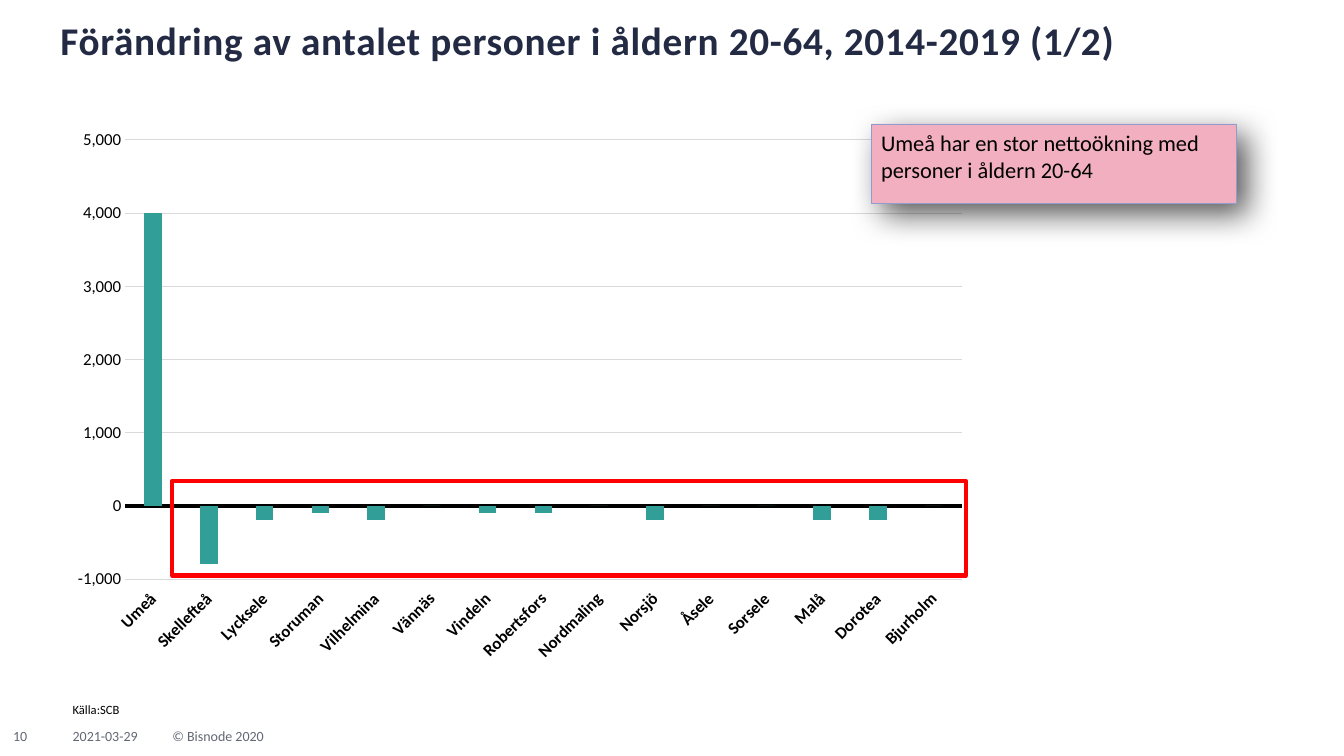
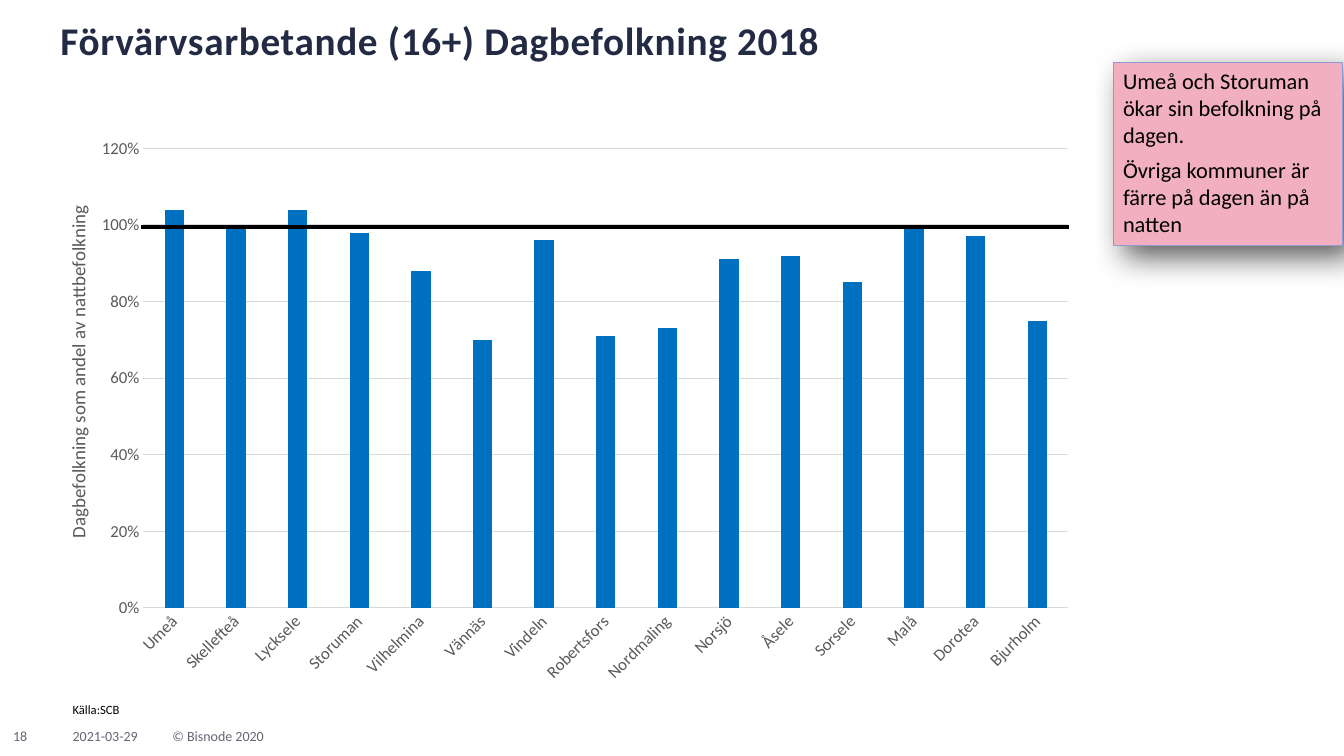
from lxml import etree
from pptx import Presentation
from pptx.chart.data import CategoryChartData
from pptx.dml.color import RGBColor
from pptx.enum.chart import XL_CHART_TYPE, XL_TICK_LABEL_POSITION, XL_TICK_MARK
from pptx.enum.shapes import MSO_CONNECTOR, MSO_SHAPE
from pptx.enum.text import MSO_ANCHOR, MSO_AUTO_SIZE, PP_ALIGN
from pptx.oxml import parse_xml
from pptx.oxml.ns import nsdecls, qn
from pptx.util import Inches, Pt

COLUMNS = XL_CHART_TYPE.COLUMN_CLUSTERED
LOW, NEXT_TO_AXIS = XL_TICK_LABEL_POSITION.LOW, XL_TICK_LABEL_POSITION.NEXT_TO_AXIS
NO_TICK = XL_TICK_MARK.NONE
STRAIGHT = MSO_CONNECTOR.STRAIGHT
RECTANGLE = MSO_SHAPE.RECTANGLE
TOP, BOTTOM = MSO_ANCHOR.TOP, MSO_ANCHOR.BOTTOM
FIT_SHAPE = MSO_AUTO_SIZE.SHAPE_TO_FIT_TEXT
LEFT = PP_ALIGN.LEFT


class Theme:
    font = "Calibri"
    navy = RGBColor.from_string("232A43")
    footer = RGBColor.from_string("626774")
    black = RGBColor.from_string("000000")
    grey = RGBColor.from_string("595959")
    grid = RGBColor.from_string("D9D9D9")
    teal = RGBColor.from_string("329E98")
    blue = RGBColor.from_string("0070C0")
    pink = RGBColor.from_string("F1AFC0")
    callout_edge = RGBColor.from_string("909BD2")
    red = RGBColor.from_string("FF0000")
    title_size = Pt(28)
    callout_size = Pt(16)
    axis_title_size = Pt(13.5)
    axis_size = Pt(12)
    footer_size = Pt(10)
    source_size = Pt(9)


def add_label(slide, box, text, size, color, anchor=BOTTOM, right_inset=0, wrap=False, spacing=None):
    label = slide.shapes.add_textbox(*[Inches(length) for length in box])
    frame = label.text_frame
    frame.margin_left = frame.margin_top = frame.margin_bottom = 0
    frame.margin_right = Inches(right_inset)
    frame.vertical_anchor = anchor
    frame.word_wrap = wrap
    frame.auto_size = FIT_SHAPE
    frame.text = text
    paragraph = frame.paragraphs[0]
    paragraph.line_spacing = spacing
    font = paragraph.runs[0].font
    font.name, font.size, font.color.rgb = Theme.font, size, color
    return paragraph.runs[0]


def set_layout(parent, index, settings):
    layout = parent.find(qn("c:layout"))
    if layout is not None:
        parent.remove(layout)
    layout = parse_xml(f"<c:layout {nsdecls('c')}><c:manualLayout/></c:layout>")
    for tag, value in settings.items():
        etree.SubElement(layout[0], qn(f"c:{tag}")).set("val", str(value))
    parent.insert(index, layout)


municipalities = [
    "Umeå", "Skellefteå", "Lycksele", "Storuman", "Vilhelmina", "Vännäs", "Vindeln", "Robertsfors",
    "Nordmaling", "Norsjö", "Åsele", "Sorsele", "Malå", "Dorotea", "Bjurholm",
]

pages = [
    {
        "number": "10",
        "title": "Förändring av antalet personer i åldern 20-64, 2014-2019 (1/2)",
        "chart_box": (0.59, 1.18, 9.13, 5.49),
        "plot": None,
        "values": [4000, -800, -200, -100, -200, 0, -100, -100, 0, -200, 0, 0, -200, -200, 0],
        "bars": Theme.teal,
        "scale": (-1000, 5000, 1000),
        "format": "#,##0",
        "axis_text": Theme.black,
        "axis_line": (Theme.black, 2.5),
        "bold_names": True,
        "label_position": LOW,
        "axis_title": None,
        "callout_box": (8.64, 1.23, 3.62, 0.79),
        "callout": ["Umeå har en stor nettoökning med personer i åldern 20-64"],
    },
    {
        "number": "18",
        "title": "Förvärvsarbetande (16+) Dagbefolkning 2018",
        "chart_box": (0.51, 1.31, 10.26, 5.8),
        "plot": (0.089, 0.028, 0.894, 0.786),
        "values": [1.04, 0.99, 1.04, 0.98, 0.88, 0.7, 0.96, 0.71, 0.73, 0.91, 0.92, 0.85, 0.99, 0.97, 0.75],
        "bars": Theme.blue,
        "scale": (0, 1.2, 0.2),
        "format": "0%",
        "axis_text": Theme.grey,
        "axis_line": (Theme.grid, 0.75),
        "bold_names": False,
        "label_position": NEXT_TO_AXIS,
        "axis_title": "Dagbefolkning som andel av nattbefolkning",
        "callout_box": (11.04, 0.62, 2.27, 1.81),
        "callout": [
            "Umeå och Storuman ökar sin befolkning på dagen.",
            "Övriga kommuner är färre på dagen än på natten",
        ],
    },
]

deck = Presentation()
deck.slide_width, deck.slide_height = Inches(13.33), Inches(7.5)
blank = deck.slide_layouts[6]
slides = []

for page in pages:
    slide = deck.slides.add_slide(blank)
    slides.append(slide)
    add_label(slide, (0.72, 7.21, 0.75, 0.17), "2021-03-29", Theme.footer_size, Theme.footer, right_inset=0.08)
    add_label(slide, (1.71, 7.21, 3.94, 0.17), "© Bisnode 2020", Theme.footer_size, Theme.footer,
              right_inset=0.08, wrap=True)
    add_label(slide, (0.13, 7.21, 0.17, 0.17), page["number"], Theme.footer_size, Theme.footer)
    title = add_label(slide, (0.6, 0.21, 12.13, 0.42), page["title"], Theme.title_size, Theme.navy,
                      wrap=True, spacing=0.9)
    title.font.bold = True
    title._r.get_or_add_rPr().set("spc", "50")

    data = CategoryChartData(number_format=page["format"])
    data.categories = municipalities
    data.add_series("Series 1", page["values"])
    chart_box = [Inches(length) for length in page["chart_box"]]
    chart = slide.shapes.add_chart(COLUMNS, *chart_box, data).chart
    chart.has_legend = False
    chart.has_title = False
    chart.font.name, chart.font.size = Theme.font, Theme.footer_size
    chart.font.color.rgb = Theme.black
    plot = chart.plots[0]
    plot.gap_width, plot.overlap, plot.vary_by_categories = 219, -27, False
    bars = plot.series[0]
    bars.invert_if_negative = False
    bars.format.fill.solid()
    bars.format.fill.fore_color.rgb = page["bars"]

    names, amounts = chart.category_axis, chart.value_axis
    for axis in (names, amounts):
        axis.major_tick_mark = axis.minor_tick_mark = NO_TICK
        font = axis.tick_labels.font
        font.name, font.size, font.color.rgb = Theme.font, Theme.axis_size, page["axis_text"]
    names.tick_labels.font.bold = page["bold_names"]
    names.tick_label_position = page["label_position"]
    names._element.find(f"{qn('c:txPr')}/{qn('a:bodyPr')}").set("rot", "-2700000")
    line_color, line_width = page["axis_line"]
    names.format.line.color.rgb = line_color
    names.format.line.width = Pt(line_width)
    amounts.minimum_scale, amounts.maximum_scale, amounts.major_unit = page["scale"]
    amounts.tick_labels.number_format = page["format"]
    amounts.tick_labels.number_format_is_linked = False
    amounts.format.line.fill.background()
    amounts.has_major_gridlines = True
    amounts.major_gridlines.format.line.color.rgb = Theme.grid
    amounts.major_gridlines.format.line.width = Pt(0.75)
    if page["plot"]:
        plot_area = chart._chartSpace.chart.plotArea
        set_layout(plot_area, 0, {"layoutTarget": "inner", "xMode": "edge", "yMode": "edge",
                                  **dict(zip("xywh", page["plot"]))})

    if page["axis_title"]:
        axis_title = amounts.axis_title
        axis_title.text_frame.text = page["axis_title"]
        font = axis_title.text_frame.paragraphs[0].runs[0].font
        font.name, font.size, font.bold = Theme.font, Theme.axis_title_size, False
        font.color.rgb = Theme.grey
        body = axis_title._element.find(f".//{qn('a:bodyPr')}")
        body.set("rot", "-5400000")
        body.set("vert", "horz")
        set_layout(axis_title._element, 1, {"xMode": "edge", "yMode": "edge", "x": 0.01, "y": 0.12})

    callout_box = [Inches(length) for length in page["callout_box"]]
    callout = slide.shapes.add_shape(RECTANGLE, *callout_box)
    callout.fill.solid()
    callout.fill.fore_color.rgb = Theme.pink
    callout.line.color.rgb = Theme.callout_edge
    callout.line.width = Pt(0.5)
    callout.shadow.inherit = False
    callout._element.spPr.find(qn("a:effectLst")).append(parse_xml(
        f'<a:outerShdw {nsdecls("a")} blurRad="{Pt(23)}" dist="{Pt(11)}" dir="2700000" algn="tl" '
        'rotWithShape="0"><a:srgbClr val="000000"><a:alpha val="65000"/></a:srgbClr></a:outerShdw>'))
    frame = callout.text_frame
    frame.word_wrap = True
    frame.vertical_anchor = TOP
    frame.text = "\n".join(page["callout"])
    for paragraph in frame.paragraphs:
        paragraph.alignment = LEFT
        paragraph.space_after = Pt(6)
        font = paragraph.runs[0].font
        font.name, font.size, font.color.rgb = Theme.font, Theme.callout_size, Theme.black

    add_label(slide, (0.72, 6.98, 0.47, 0.14), "Källa:SCB", Theme.source_size, Theme.black,
              anchor=TOP, spacing=0.9)

change_slide, daytime_slide = slides

decline_frame = change_slide.shapes.add_shape(
    RECTANGLE, Inches(1.71), Inches(4.77), Inches(7.87), Inches(0.94))
decline_frame.fill.background()
decline_frame.line.color.rgb = Theme.red
decline_frame.line.width = Pt(3)
decline_frame.shadow.inherit = False

full_share = daytime_slide.shapes.add_connector(
    STRAIGHT, Inches(1.4), Inches(2.25), Inches(10.6), Inches(2.25))
full_share.line.color.rgb = Theme.black
full_share.line.width = Pt(3.25)
etree.SubElement(full_share._element.spPr, qn("a:effectLst"))

deck.save("out.pptx")
